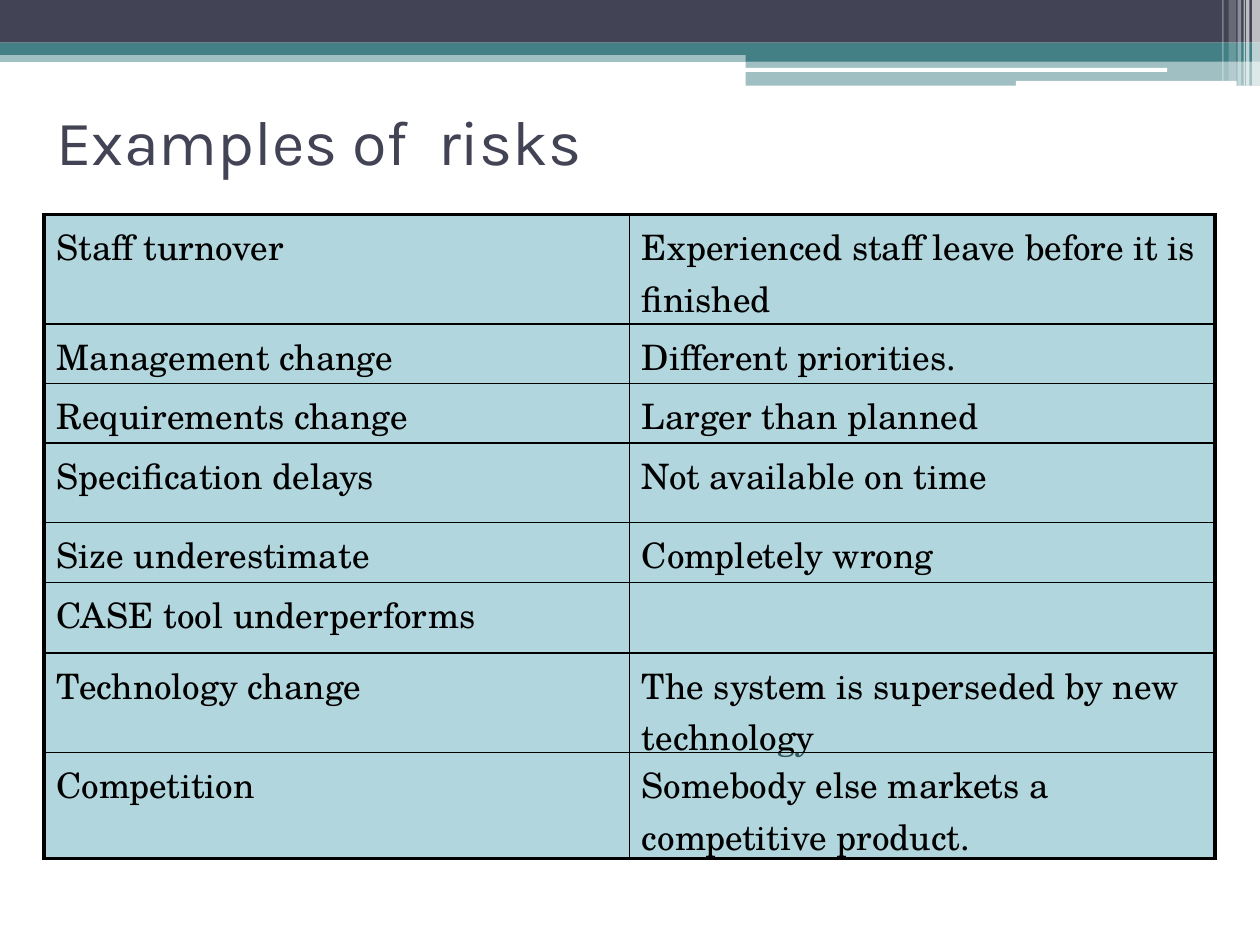
import pptx
import pptx.dml.color
import pptx.enum.shapes
import pptx.enum.text
import pptx.oxml
import pptx.oxml.ns
import pptx.util
from pptx.dml.color import RGBColor
from pptx.util import Cm

NAVY = RGBColor(0x42, 0x44, 0x56)
TEAL = RGBColor(0x43, 0x80, 0x86)
WHITE = RGBColor(0xFF, 0xFF, 0xFF)
BLACK = RGBColor(0, 0, 0)
CELL_BLUE = RGBColor(0x67, 0xAF, 0xBD)

BANDS = [
    (0, 1.02, 25.4, 0.23, TEAL, 50),
    (0, 0, 25.4, 0.86, NAVY, 100),
    (0, 0.86, 25.4, 0.25, TEAL, 100),
    (15.03, 0.99, 10.37, 0.25, TEAL, 100),
    (15.03, 1.23, 10.37, 0.5, TEAL, 50),
]
ROUNDED_BARS = [(15.02, 1.37, 8.51, 0.08), (20.48, 1.63, 4.45, 0.1)]
STRIPES = [
    (25.24, 0.16, 1.73, 65),
    (25.12, 0.07, 1.73, 65),
    (25.07, 0.03, 1.73, 60),
    (24.95, 0.07, 1.73, 40),
    (24.77, 0.15, 1.63, 20),
    (24.64, 0.03, 1.63, 30),
]
RISKS = [
    (2.21, "Staff turnover", "Experienced staff leave before it is finished"),
    (1.2, "Management change", "Different priorities."),
    (1.2, "Requirements change", "Larger than planned"),
    (1.6, "Specification delays", "Not available on time"),
    (1.21, "Size underestimate", "Completely wrong"),
    (1.42, "CASE tool underperforms", ""),
    (2.01, "Technology change", "The system is superseded by new technology"),
    (2.14, "Competition", "Somebody else markets a competitive product."),
]


def set_opacity(fill_parent, percent):
    """Set the opacity of the solid fill held by an XML element."""
    color = fill_parent.find(pptx.oxml.ns.qn("a:solidFill"))[0]
    color.append(pptx.oxml.parse_xml(
        f'<a:alpha {pptx.oxml.ns.nsdecls("a")} val="{percent * 1000}"/>'))


def add_bar(slide, left, top, width, height, color, opacity=100, rounded=False):
    """Add a borderless, optionally rounded or translucent bar."""
    kinds = pptx.enum.shapes.MSO_SHAPE
    kind = kinds.ROUNDED_RECTANGLE if rounded else kinds.RECTANGLE
    shape = slide.shapes.add_shape(kind, Cm(left), Cm(top), Cm(width), Cm(height))
    shape.shadow.inherit = False
    shape.line.fill.background()
    shape.fill.solid()
    shape.fill.fore_color.rgb = color
    if opacity < 100:
        set_opacity(shape.element.spPr, opacity)


def add_header(slide):
    """Draw the coloured bands, white bars and stripes along the top."""
    for band in BANDS:
        add_bar(slide, *band)
    for bar in ROUNDED_BARS:
        add_bar(slide, *bar, WHITE, rounded=True)
    for left, width, height, opacity in STRIPES:
        add_bar(slide, left, 0, width, height, WHITE, opacity)


def style_paragraph(paragraph, name, size, color):
    """Set the font of a whole paragraph."""
    paragraph.font.name = name
    paragraph.font.size = pptx.util.Pt(size)
    paragraph.font.color.rgb = color


def add_title(slide, text):
    """Add the slide title."""
    shape = slide.shapes.add_textbox(Cm(0.89), Cm(1.93), Cm(23.6), Cm(1.8))
    frame = shape.text_frame
    frame.word_wrap = True
    frame.vertical_anchor = pptx.enum.text.MSO_ANCHOR.MIDDLE
    frame.text = text
    style_paragraph(frame.paragraphs[0], "Karla", 36, NAVY)


def set_borders(cell, widths):
    """Put black borders, given in points by side, before the cell fill."""
    properties = cell._tc.get_or_add_tcPr()
    for position, (side, points) in enumerate(widths.items()):
        properties.insert(position, pptx.oxml.parse_xml(
            f'<a:{side} {pptx.oxml.ns.nsdecls("a")} w="{int(points * 12700)}">'
            f'<a:solidFill><a:srgbClr val="{BLACK}"/></a:solidFill></a:{side}>'))


def fill_cell(cell, text):
    """Write and colour one table cell."""
    cell.margin_left = cell.margin_right = Cm(0.25)
    cell.margin_top, cell.margin_bottom = Cm(0.13), 0
    cell.text = text
    style_paragraph(cell.text_frame.paragraphs[0], "TeX Gyre Schola", 20, BLACK)
    cell.fill.solid()
    cell.fill.fore_color.rgb = CELL_BLUE
    set_opacity(cell._tc.tcPr, 50)


def add_risk_table(slide):
    """Add the two-column table with a thick outer frame."""
    height = sum(risk[0] for risk in RISKS)
    table = slide.shapes.add_table(
        len(RISKS), 2, Cm(0.89), Cm(4.32), Cm(23.6), Cm(height)).table
    table.first_row = table.horz_banding = False
    last = len(RISKS) - 1
    for row, (row_height, *texts) in enumerate(RISKS):
        table.rows[row].height = Cm(row_height)
        for column, text in enumerate(texts):
            cell = table.cell(row, column)
            fill_cell(cell, text)
            outer = {"lnL": column == 0, "lnR": column == 1,
                     "lnT": row == 0, "lnB": row == last}
            set_borders(cell, {side: 2.25 if edge else 1
                               for side, edge in outer.items()})


def main():
    """Build and save the presentation."""
    presentation = pptx.Presentation()
    presentation.slide_width, presentation.slide_height = Cm(25.4), Cm(19.05)
    slide = presentation.slides.add_slide(presentation.slide_layouts[6])
    add_header(slide)
    add_title(slide, "Examples of  risks")
    add_risk_table(slide)
    presentation.save("out.pptx")


if __name__ == "__main__":
    main()
